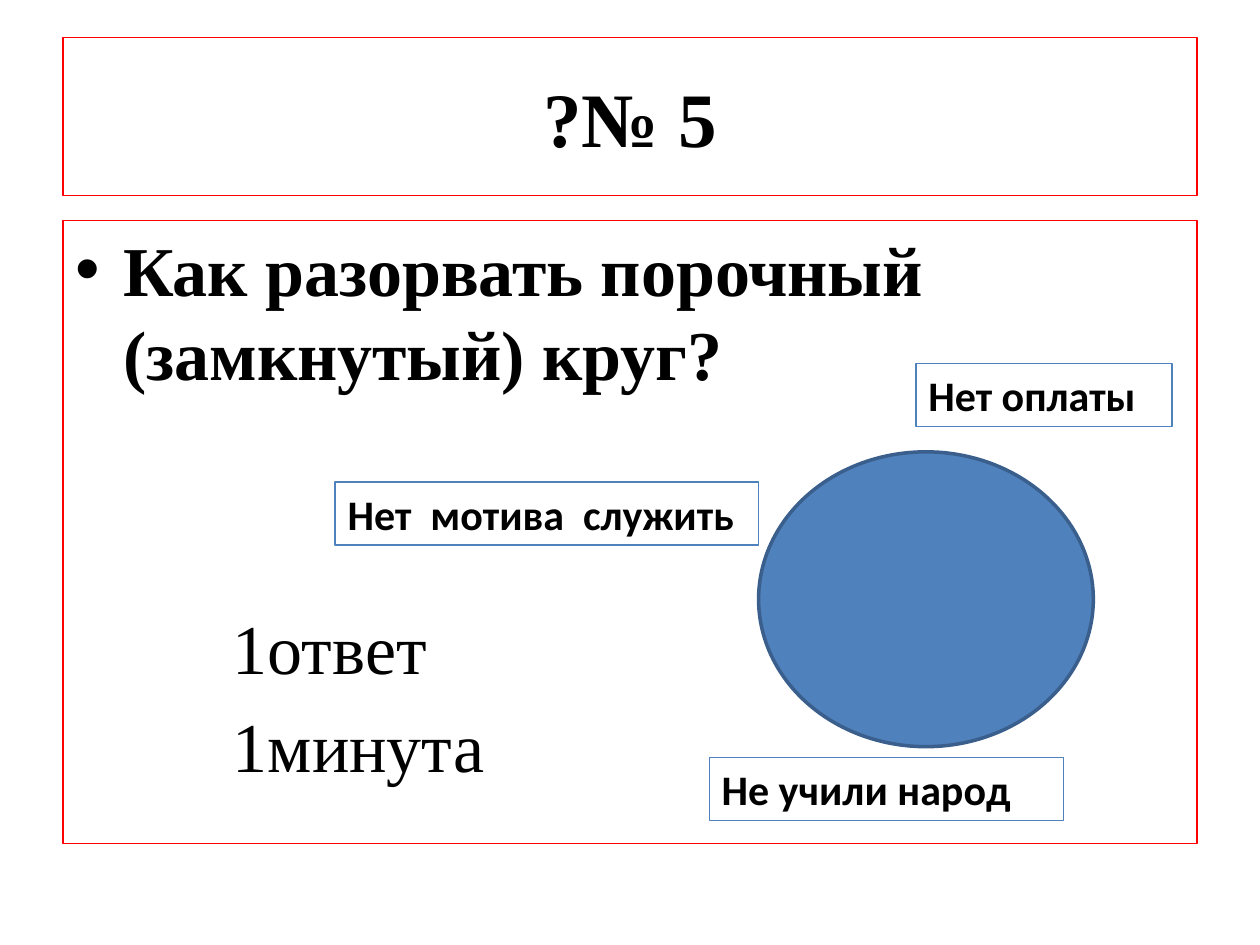
from dataclasses import dataclass

from lxml.etree import SubElement
from pptx import Presentation
from pptx.dml.color import RGBColor
from pptx.enum.shapes import MSO_SHAPE as Preset
from pptx.enum.text import MSO_ANCHOR as Anchor, PP_ALIGN as Align
from pptx.oxml.ns import qn
from pptx.util import Inches, Pt

WIDTH, HEIGHT = 10, 7.5
TITLE_ONLY = 5


@dataclass(frozen=True)
class Theme:
    serif: str = "Times New Roman"
    sans: str = "Calibri"
    ink: RGBColor = RGBColor(0, 0, 0)
    frame: RGBColor = RGBColor(0xFF, 0, 0)
    accent: RGBColor = RGBColor(0x4F, 0x81, 0xBD)
    accent_dark: RGBColor = RGBColor(0x3A, 0x5F, 0x8C)
    title_size: int = 44
    body_size: int = 40
    label_size: int = 24
    thin: float = 0.75
    thick: float = 2


THEME = Theme()


def part(box, left, top, width, height):
    """Turn shares of a box into a box in inches."""
    x, y, box_width, box_height = box
    return (x + left * box_width, y + top * box_height,
            width * box_width, height * box_height)


def place(shape, box):
    shape.left, shape.top, shape.width, shape.height = map(Inches, box)


def outline(shape, color, width=THEME.thin):
    shape.line.color.rgb = color
    shape.line.width = Pt(width)


def add_run(paragraph, text, size, font, bold=True):
    run = paragraph.add_run()
    run.text = text
    run.font.size = Pt(size)
    run.font.name = font
    run.font.bold = bold
    run.font.color.rgb = THEME.ink


def add_text_box(slide, box, line_color):
    shape = slide.shapes.add_textbox(*map(Inches, box))
    outline(shape, line_color)
    shape.text_frame.word_wrap = True
    return shape.text_frame


def set_indent(paragraph, left, hanging=0, bullet=None):
    properties = paragraph._p.get_or_add_pPr()
    properties.set("marL", str(Inches(left)))
    properties.set("indent", str(-Inches(hanging)))
    if bullet:
        SubElement(properties, qn("a:buFont")).set("typeface", "Arial")
        SubElement(properties, qn("a:buChar")).set("char", bullet)


def build_title(slide, box):
    title = slide.shapes.title
    place(title, box)
    outline(title, THEME.frame)
    title.text_frame.vertical_anchor = Anchor.MIDDLE
    paragraph = title.text_frame.paragraphs[0]
    paragraph.alignment = Align.CENTER
    add_run(paragraph, "?№ 5", THEME.title_size, THEME.serif)


def build_question(slide, box):
    frame = add_text_box(slide, box, THEME.frame)
    question = frame.paragraphs[0]
    question.space_before = Pt(8)
    set_indent(question, 0.38, 0.38, "•")
    add_run(question, "Как разорвать порочный (замкнутый) круг?",
            THEME.body_size, THEME.serif)
    for text, gap in (("1ответ", 120), ("1минута", 8)):
        paragraph = frame.add_paragraph()
        paragraph.space_before = Pt(gap)
        set_indent(paragraph, 1.25)
        add_run(paragraph, text, THEME.body_size, THEME.serif, bold=False)


def build_vicious_circle(slide, box):
    """Place the circle and the three causes around it."""
    circle = slide.shapes.add_shape(
        Preset.OVAL, *map(Inches, part(box, 0.506, 0.193, 0.4, 0.645)))
    circle.shadow.inherit = False
    circle.fill.solid()
    circle.fill.fore_color.rgb = THEME.accent
    outline(circle, THEME.accent_dark, THEME.thick)

    causes = (
        ("Нет оплаты", 0.694, 0, 0.306),
        ("Нет  мотива  служить", 0, 0.259, 0.506),
        ("Не учили народ", 0.447, 0.862, 0.423),
    )
    for text, left, top, width in causes:
        frame = add_text_box(slide, part(box, left, top, width, 0.138), THEME.accent)
        add_run(frame.paragraphs[0], text, THEME.label_size, THEME.sans)


def main():
    presentation = Presentation()
    presentation.slide_width = Inches(WIDTH)
    presentation.slide_height = Inches(HEIGHT)
    slide = presentation.slides.add_slide(presentation.slide_layouts[TITLE_ONLY])
    page = (0, 0, WIDTH, HEIGHT)
    build_title(slide, part(page, 0.05, 0.04, 0.9, 1 / 6))
    content = part(page, 0.05, 0.233, 0.9, 0.66)
    build_question(slide, content)
    build_vicious_circle(slide, part(content, 0.24, 0.23, 0.738, 0.733))
    presentation.save("out.pptx")


if __name__ == "__main__":
    main()
